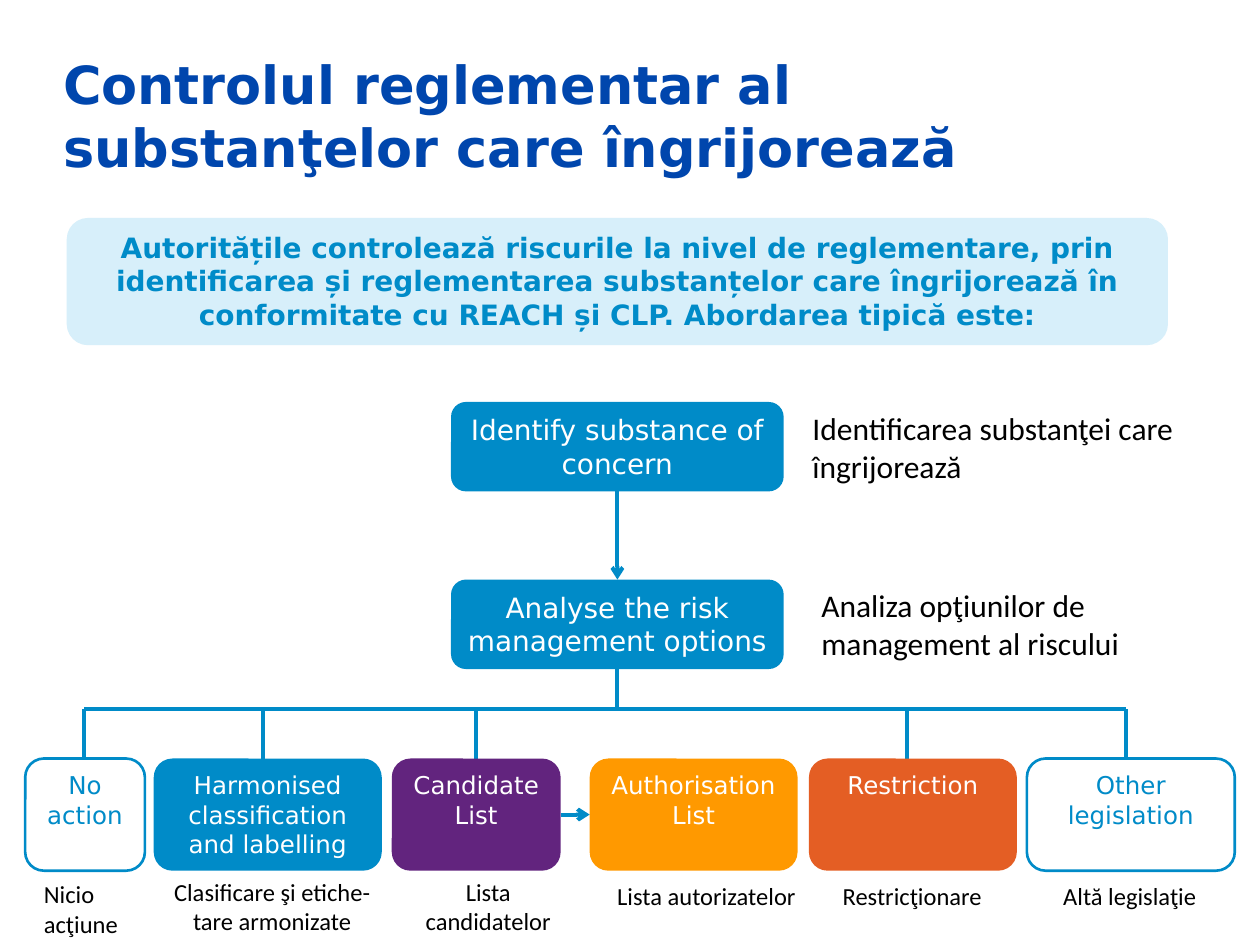
from dataclasses import dataclass

from pptx import Presentation
from pptx.dml.color import RGBColor
from pptx.enum.shapes import MSO_CONNECTOR, MSO_SHAPE
from pptx.enum.text import MSO_ANCHOR, MSO_AUTO_SIZE, PP_ALIGN
from pptx.oxml.ns import qn
from pptx.util import Inches, Pt
from lxml.etree import SubElement


@dataclass(frozen=True)
class Theme:
    navy: str = "0046AD"
    blue: str = "008BC8"
    pale: str = "D7EFFA"
    purple: str = "62247E"
    amber: str = "FF9900"
    orange: str = "E45E24"
    white: str = "FFFFFF"
    black: str = "000000"
    heading_font: str = "DejaVu Sans"
    caption_font: str = "Calibri"
    title_size: int = 30
    note_size: int = 18
    step_size: int = 16
    outcome_size: int = 14
    line_width: float = 2.25
    outline_width: float = 1.5


THEME = Theme()
COLUMNS, ROWS = 100, 75  # grid laid over the slide


class FlowSlide:
    """Holds the theme and the current slide; places elements on the grid."""

    def __init__(self, deck, theme):
        self.theme = theme
        self.slide = deck.slides.add_slide(deck.slide_layouts[5])
        self.column = deck.slide_width / COLUMNS
        self.row = deck.slide_height / ROWS

    def place(self, left, top, width, height):
        return (round(left * self.column), round(top * self.row),
                round(width * self.column), round(height * self.row))

    def add_text(self, frame, paragraphs, size, font, color, align, bold=False):
        for number, text in enumerate(paragraphs):
            paragraph = frame.add_paragraph() if number else frame.paragraphs[0]
            paragraph.alignment = align
            run = paragraph.add_run()
            run.text = text
            run.font.size, run.font.name, run.font.bold = Pt(size), font, bold
            run.font.color.rgb = RGBColor.from_string(color)

    def title(self, text, *area):
        title = self.slide.shapes.title
        title.left, title.top, title.width, title.height = self.place(*area)
        frame = title.text_frame
        frame.word_wrap, frame.auto_size = True, MSO_AUTO_SIZE.NONE
        frame.vertical_anchor = MSO_ANCHOR.MIDDLE
        self.add_text(frame, [text], self.theme.title_size, self.theme.heading_font,
                      self.theme.navy, PP_ALIGN.LEFT, bold=True)

    def box(self, text, area, fill, size, color=None, outline=None, bold=False):
        box = self.slide.shapes.add_shape(MSO_SHAPE.ROUNDED_RECTANGLE, *self.place(*area))
        box.shadow.inherit = False
        box.fill.solid()
        box.fill.fore_color.rgb = RGBColor.from_string(fill)
        if outline:
            box.line.color.rgb = RGBColor.from_string(outline)
            box.line.width = Pt(self.theme.outline_width)
        else:
            box.line.fill.background()
        frame = box.text_frame
        frame.word_wrap, frame.vertical_anchor = True, MSO_ANCHOR.TOP
        self.add_text(frame, [text], size, self.theme.heading_font,
                      color or self.theme.white, PP_ALIGN.CENTER, bold)
        return box

    def caption(self, paragraphs, area, size, align=PP_ALIGN.LEFT, wrap=True,
                anchor=MSO_ANCHOR.TOP):
        frame = self.slide.shapes.add_textbox(*self.place(*area)).text_frame
        frame.word_wrap, frame.vertical_anchor = wrap, anchor
        self.add_text(frame, paragraphs, size, self.theme.caption_font,
                      self.theme.black, align)

    def line(self, x1, y1, x2, y2):
        line = self.slide.shapes.add_connector(MSO_CONNECTOR.STRAIGHT,
                                               *self.place(x1, y1, x2, y2))
        line.end_x, line.end_y = self.place(x2, y2, 0, 0)[:2]
        line.line.color.rgb = RGBColor.from_string(self.theme.blue)
        line.line.width = Pt(self.theme.line_width)
        SubElement(line.element.spPr, qn("a:effectLst"))
        return line

    def arrow(self, source, source_side, target, target_side):
        arrow = self.line(0, 0, 0, 0)
        arrow.begin_connect(source, source_side)
        arrow.end_connect(target, target_side)
        SubElement(arrow.element.spPr.find(qn("a:ln")), qn("a:tailEnd"), type="arrow")


def main():
    deck = Presentation()
    deck.slide_width, deck.slide_height = Inches(10), Inches(7.5)
    flow = FlowSlide(deck, THEME)

    # Title and introduction
    flow.title("Controlul reglementar al substanţelor care îngrijorează", 4, 2.9, 90, 12.5)
    flow.box("Autoritățile controlează riscurile la nivel de reglementare, prin "
             "identificarea și reglementarea substanțelor care îngrijorează în "
             "conformitate cu REACH și CLP. Abordarea tipică este:",
             (5.3, 17.3, 87.4, 10.1), THEME.pale, THEME.step_size, THEME.blue, bold=True)

    # Branches, running behind the boxes
    branch_row, branch_columns = 56.3, (6.7, 20.9, 37.8, 72, 89.4)
    flow.line(49, 46, 49, branch_row)
    flow.line(branch_columns[0], branch_row, branch_columns[-1], branch_row)
    for column in branch_columns:
        flow.line(column, branch_row, column, 62.1)

    # Two steps, each with its translation
    steps = [
        ("Identify substance of concern", 31.9,
         "Identificarea substanţei care îngrijorează", (63.5, 32, 33.6, 7.1)),
        ("Analyse the risk management options", 46,
         "Analiza opţiunilor de management al riscului", (64.2, 46, 30.1, 7.1)),
    ]
    step_boxes = []
    for step, top, translation, area in steps:
        step_boxes.append(flow.box(step, (35.8, top, 26.4, 7.1), THEME.blue, THEME.step_size))
        flow.caption([translation], area, THEME.note_size)
    identify, analyse = step_boxes
    flow.arrow(identify, 2, analyse, 0)

    # Outcomes: text, left, width, fill (None for an outlined box)
    outcomes = [
        ("No action", 2, 9.5, None),
        ("Harmonised classification and labelling", 12.2, 18.1, THEME.blue),
        ("Candidate List", 31.1, 13.4, THEME.purple),
        ("Authorisation List", 46.8, 16.5, THEME.amber),
        ("Restriction", 64.2, 16.5, THEME.orange),
        ("Other legislation", 81.5, 16.5, None),
    ]
    outcome_boxes = {}
    for outcome, left, width, fill in outcomes:
        accent = None if fill else THEME.blue
        outcome_boxes[outcome] = flow.box(
            outcome, (left, 60.2, width, 8.9), fill or THEME.white,
            THEME.outcome_size, color=accent, outline=accent)
    flow.arrow(outcome_boxes["Candidate List"], 3, outcome_boxes["Authorisation List"], 1)

    # Translations below the outcomes
    size, center = THEME.outcome_size, PP_ALIGN.CENTER
    flow.caption(["Nicio", "acţiune"], (2.5, 69.3, 8.4, 5.7), size, wrap=False)
    flow.caption(["Clasificare şi etiche-tare armonizate"], (12, 69.1, 19.2, 5.7), size, center)
    flow.caption(["Lista", "candidatelor"], (32.7, 69.1, 12.1, 5.7), size, center, wrap=False)
    flow.caption(["Lista autorizatelor"], (48, 69.4, 16.3, 3.4), size, wrap=False)
    flow.caption(["Restricţionare"], (64.5, 69.1, 15.8, 4), size, center,
                 anchor=MSO_ANCHOR.MIDDLE)
    flow.caption(["Altă legislaţie"], (83.4, 69.4, 12.7, 3.4), size, wrap=False)

    deck.save("out.pptx")


if __name__ == "__main__":
    main()
